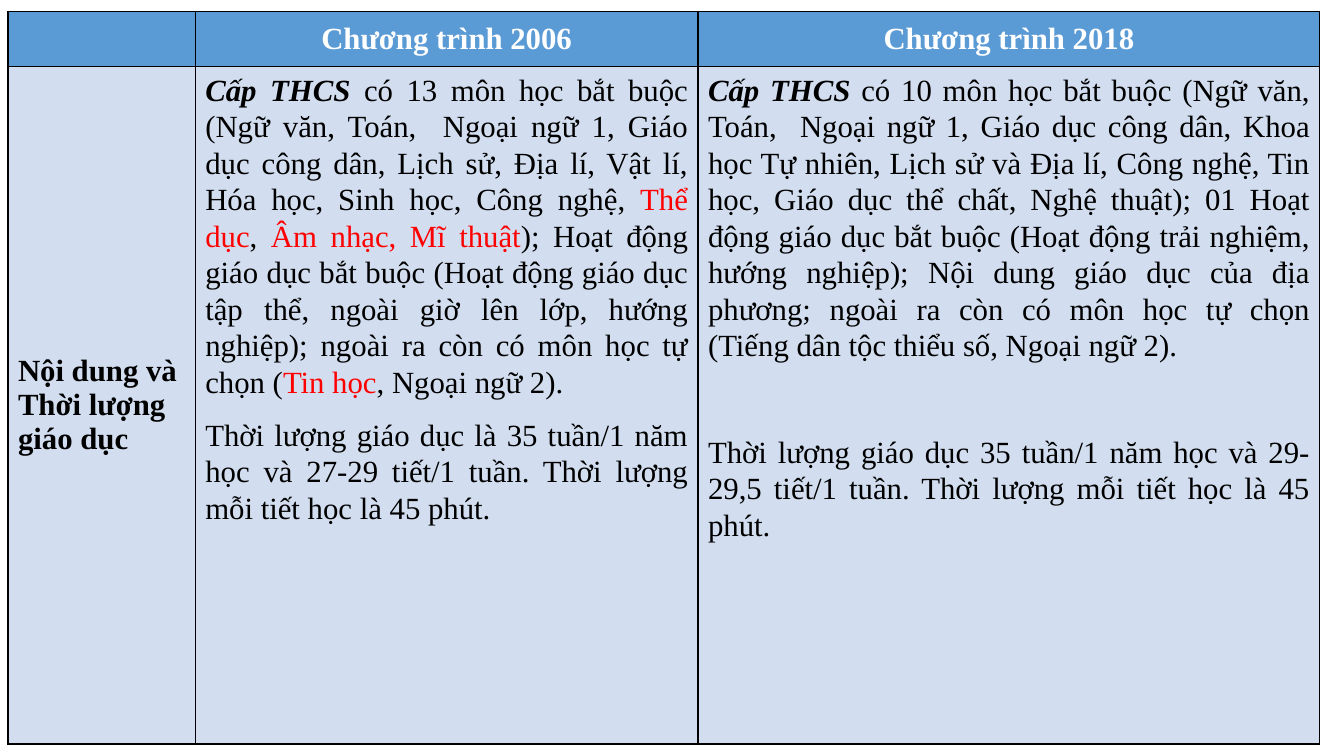
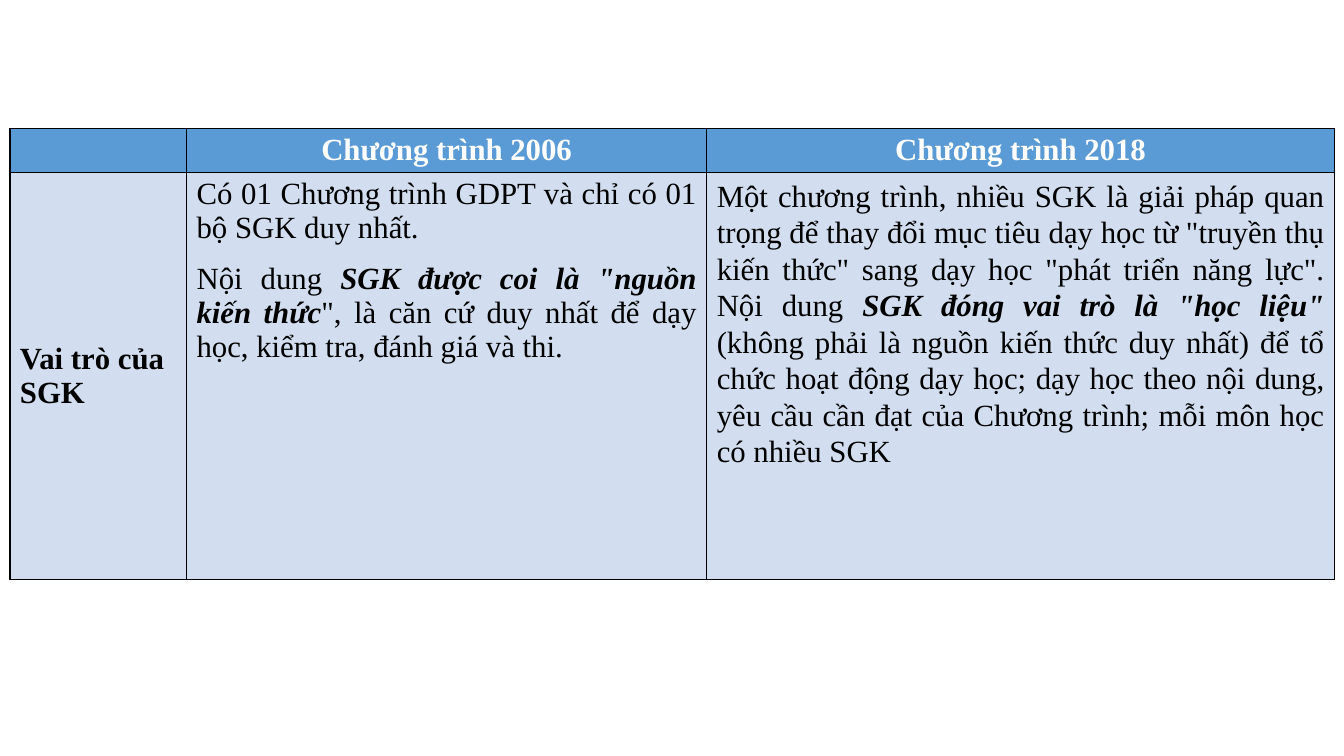
"""Build two slides comparing the 2006 and 2018 school programmes in tables."""
from lxml import etree
from pptx import Presentation
from pptx.dml.color import RGBColor
from pptx.enum.text import MSO_ANCHOR, PP_ALIGN
from pptx.oxml.ns import qn
from pptx.util import Cm, Pt

LEFT, MID, JUST = PP_ALIGN.LEFT, PP_ALIGN.CENTER, PP_ALIGN.JUSTIFY
TOP, CENTER = MSO_ANCHOR.TOP, MSO_ANCHOR.MIDDLE
BLUE = RGBColor(0x5B, 0x9B, 0xD5)
PALE = RGBColor(0xD2, 0xDE, 0xEF)
WHITE = RGBColor(0xFF, 0xFF, 0xFF)
BLACK = RGBColor(0, 0, 0)
RED = RGBColor(0xFF, 0, 0)

FONT = {"name": "Times New Roman", "size": Pt(22)}
LOOKS = {
    "head": {"bold": True, "italic": False, "color": WHITE},
    "side": {"bold": True, "italic": False, "color": BLACK},
    "body": {"bold": False, "italic": False, "color": BLACK},
    "key": {"bold": True, "italic": True, "color": BLACK},
    "red": {"bold": False, "italic": False, "color": RED},
}
HEAD = {"alignment": MID}
SIDE = {"alignment": LEFT}
LOOSE = {"alignment": JUST, "line_spacing": 1.07,
         "space_before": Pt(6), "space_after": Pt(6)}
APART = {**LOOSE, "space_before": Pt(44)}
TIGHT = {"alignment": JUST, "space_after": Pt(12)}

TITLES = [
    [],
    [(HEAD, [("head", "Chương trình 2006")])],
    [(HEAD, [("head", "Chương trình 2018")])],
]

SLIDES = [
    {
        "at": (0.2, 0.28), "cols": (4.72, 12.67, 15.67), "rows": (1.4, 17.07),
        "cells": [
            [(SIDE, [("side", "Nội dung và Thời lượng giáo dục")])],
            [
                (LOOSE, [
                    ("key", "Cấp THCS "),
                    ("body", "có 13 môn học bắt buộc (Ngữ văn, Toán,  Ngoại ngữ 1, "
                             "Giáo dục công dân, Lịch sử, Địa lí, Vật lí, Hóa học, "
                             "Sinh học, Công nghệ, "),
                    ("red", "Thể dục"),
                    ("body", ", "),
                    ("red", "Âm nhạc, Mĩ thuật"),
                    ("body", "); Hoạt động giáo dục bắt buộc (Hoạt động giáo dục tập "
                             "thể, ngoài giờ lên lớp, hướng nghiệp); ngoài ra còn có "
                             "môn học tự chọn ("),
                    ("red", "Tin học"),
                    ("body", ", Ngoại ngữ 2)."),
                ]),
                (LOOSE, [
                    ("body", "Thời lượng giáo dục là 35 tuần/1 năm học và 27-29 "
                             "tiết/1 tuần. Thời lượng mỗi tiết học là 45 phút."),
                ]),
            ],
            [
                (LOOSE, [
                    ("key", "Cấp THCS "),
                    ("body", "có 10 môn học bắt buộc (Ngữ văn, Toán,  Ngoại ngữ 1, "
                             "Giáo dục công dân, Khoa học Tự nhiên, Lịch sử và Địa lí, "
                             "Công nghệ, Tin học, Giáo dục thể chất, Nghệ thuật); 01 "
                             "Hoạt động giáo dục bắt buộc (Hoạt động trải nghiệm, "
                             "hướng nghiệp); Nội dung giáo dục của địa phương; ngoài "
                             "ra còn có môn học tự chọn (Tiếng dân tộc thiểu số, "
                             "Ngoại ngữ 2)."),
                ]),
                (APART, [
                    ("body", "Thời lượng giáo dục 35 tuần/1 năm học và 29-29,5 "
                             "tiết/1 tuần. Thời lượng mỗi tiết học là 45 phút."),
                ]),
            ],
        ],
    },
    {
        "at": (0.25, 3.23), "cols": (4.45, 13.11, 15.82), "rows": (1.04, 10.26),
        "cells": [
            [(SIDE, [("side", "Vai trò của SGK")])],
            [
                (TIGHT, [
                    ("body", "Có 01 Chương trình GDPT và chỉ có 01 bộ SGK duy nhất."),
                ]),
                (TIGHT, [
                    ("body", "Nội dung "),
                    ("key", 'SGK được coi là "nguồn kiến thức'),
                    ("body", '", là căn cứ duy nhất để dạy học, kiểm tra, đánh giá '
                             "và thi."),
                ]),
            ],
            [
                (LOOSE, [
                    ("body", "Một chương trình, nhiều SGK là giải pháp quan trọng để "
                             'thay đổi mục tiêu dạy học từ "truyền thụ kiến thức" sang '
                             'dạy học "phát triển năng lực". Nội dung '),
                    ("key", 'SGK đóng vai trò là "học liệu" '),
                    ("body", "(không phải là nguồn kiến thức duy nhất) để tổ chức hoạt "
                             "động dạy học; dạy học theo nội dung, yêu cầu cần đạt của "
                             "Chương trình; mỗi môn học có nhiều SGK"),
                ]),
            ],
        ],
    },
]


def frame(cell):
    props = cell._tc.get_or_add_tcPr()
    for side in ("a:lnL", "a:lnR", "a:lnT", "a:lnB"):
        line = etree.SubElement(props, qn(side), w=str(Pt(1)))
        fill = etree.SubElement(line, qn("a:solidFill"))
        etree.SubElement(fill, qn("a:srgbClr"), val=str(BLACK))


def write(cell, paras):
    body = cell.text_frame
    for i, (form, runs) in enumerate(paras):
        para = body.add_paragraph() if i else body.paragraphs[0]
        for key, value in form.items():
            setattr(para, key, value)
        for look, text in runs:
            run = para.add_run()
            run.text = text
            for key, value in {**FONT, **LOOKS[look]}.items():
                if key == "color":
                    run.font.color.rgb = value
                else:
                    setattr(run.font, key, value)


deck = Presentation()
deck.slide_width, deck.slide_height = Cm(33.87), Cm(19.05)
blank = deck.slide_layouts[6]

for plan in SLIDES:
    slide = deck.slides.add_slide(blank)
    left, top = plan["at"]
    cols, rows = plan["cols"], plan["rows"]
    table = slide.shapes.add_table(len(rows), len(cols), Cm(left), Cm(top),
                                   Cm(sum(cols)), Cm(sum(rows))).table
    table.horz_banding = False
    for col, width in zip(table.columns, cols):
        col.width = Cm(width)
    for row, height in zip(table.rows, rows):
        row.height = Cm(height)
    for r, texts in enumerate((TITLES, plan["cells"])):
        for c, paras in enumerate(texts):
            cell = table.cell(r, c)
            frame(cell)
            cell.fill.solid()
            cell.fill.fore_color.rgb = PALE if r else BLUE
            cell.vertical_anchor = TOP if r and c else CENTER
            write(cell, paras)

deck.save("out.pptx")
